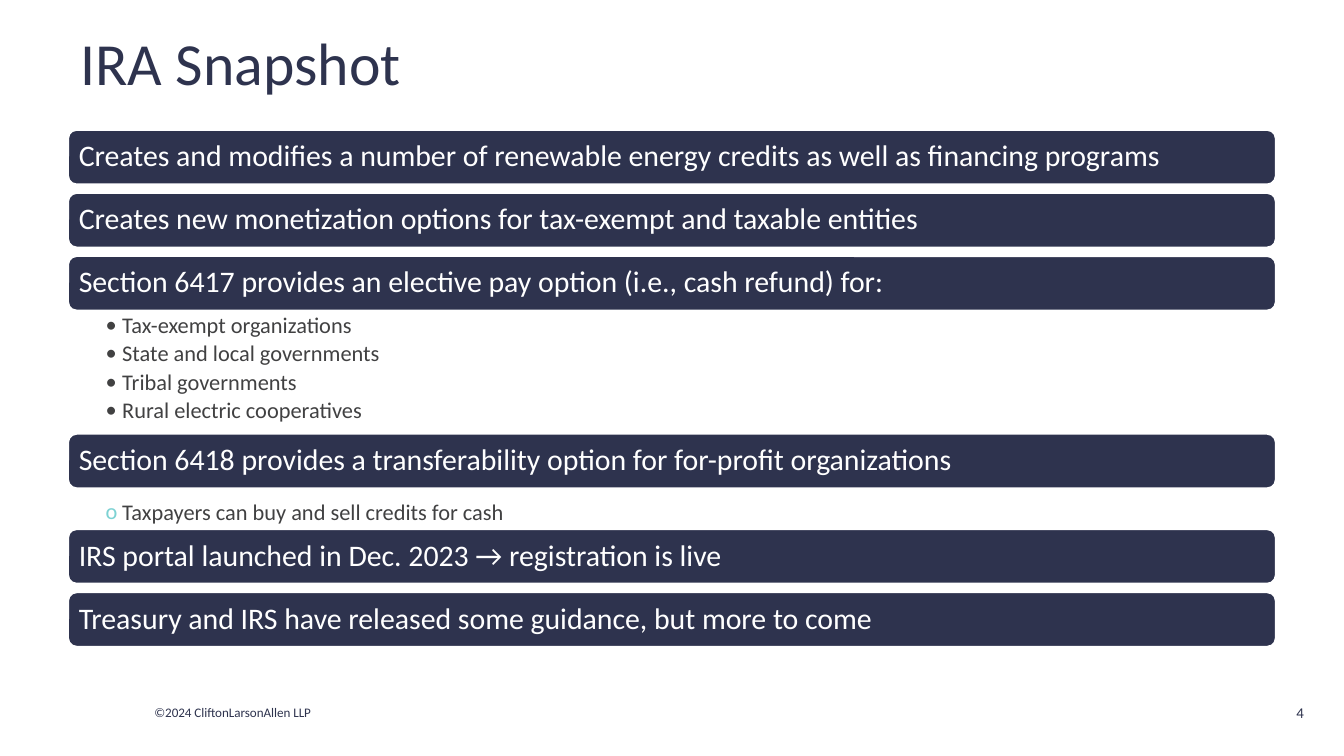
from dataclasses import dataclass
from typing import Any

from pptx import Presentation
from pptx.dml.color import RGBColor
from pptx.enum.shapes import MSO_AUTO_SHAPE_TYPE as ShapeType
from pptx.enum.text import MSO_VERTICAL_ANCHOR as Anchor, PP_PARAGRAPH_ALIGNMENT as Align
from pptx.oxml.ns import qn
from pptx.util import Pt
from lxml.etree import SubElement


@dataclass(frozen=True)
class Theme:
    font: str = "Calibri"
    navy: str = "2E334E"
    white: str = "FFFFFF"
    gray: str = "414142"
    teal: str = "7DD2D3"
    title_size: float = 32
    bar_size: float = 16
    list_size: float = 12
    number_size: float = 8
    footer_size: float = 7


@dataclass(frozen=True)
class Box:
    left: float
    top: float
    width: float
    height: float

    def lengths(self) -> tuple:
        return Pt(self.left), Pt(self.top), Pt(self.width), Pt(self.height)


@dataclass(frozen=True)
class Label:
    text: str
    box: Box
    size: float
    align: Any = Align.LEFT


@dataclass(frozen=True)
class Section:
    heading: str
    items: tuple = ()
    bullet: str = "•"
    bullet_color: str = ""
    list_height: float = 0
    list_offset: float = 0


THEME = Theme()
BAR_LEFT, BAR_TOP, BAR_WIDTH, BAR_HEIGHT, BAR_GAP = 36, 69.1, 648, 30.2, 3.6
BULLET_INDENT = 8.9

LABELS = (
    Label("IRA Snapshot", Box(36, 5.8, 648, 54), THEME.title_size),
    Label("©2024 CliftonLarsonAllen LLP", Box(75.6, 373.7, 112, 15.8), THEME.footer_size),
    Label("4", Box(674.6, 368, 31, 27.4), THEME.number_size, Align.RIGHT),
)

SECTIONS = (
    Section("Creates and modifies a number of renewable energy credits as well as financing programs"),
    Section("Creates new monetization options for tax-exempt and taxable entities"),
    Section(
        "Section 6417 provides an elective pay option (i.e., cash refund) for:",
        ("Tax-exempt organizations", "State and local governments",
         "Tribal governments", "Rural electric cooperatives"),
        bullet_color=THEME.gray, list_height=65,
    ),
    Section(
        "Section 6418 provides a transferability option for for-profit organizations",
        ("Taxpayers can buy and sell credits for cash",),
        bullet="o", bullet_color=THEME.teal, list_height=20.9, list_offset=5,
    ),
    Section("IRS portal launched in Dec. 2023 → registration is live"),
    Section("Treasury and IRS have released some guidance, but more to come"),
)


def apply(target: Any, values: dict) -> None:
    for name, value in values.items():
        setattr(target, name, value)


def format_frame(frame: Any, anchor: Any, left: float = 7.2, right: float = 7.2,
                 vertical: float = 3.6) -> None:
    apply(frame, {
        "word_wrap": True, "vertical_anchor": anchor,
        "margin_left": Pt(left), "margin_right": Pt(right),
        "margin_top": Pt(vertical), "margin_bottom": Pt(vertical),
    })


def write(paragraph: Any, text: str, size: float, color: str, **layout: Any) -> None:
    apply(paragraph, layout)
    run = paragraph.add_run()
    run.text = text
    apply(run.font, {"name": THEME.font, "size": Pt(size)})
    run.font.color.rgb = RGBColor.from_string(color)


def add_bullet(paragraph: Any, character: str, color: str) -> None:
    properties = paragraph._p.get_or_add_pPr()
    properties.set("marL", str(Pt(BULLET_INDENT)))
    properties.set("indent", str(-Pt(BULLET_INDENT)))
    bullet_color = SubElement(properties, qn("a:buClr"))
    SubElement(bullet_color, qn("a:srgbClr"), val=color)
    SubElement(properties, qn("a:buFont"), typeface=THEME.font)
    SubElement(properties, qn("a:buChar"), char=character)


def add_label(slide: Any, label: Label) -> None:
    frame = slide.shapes.add_textbox(*label.box.lengths()).text_frame
    format_frame(frame, Anchor.MIDDLE)
    write(frame.paragraphs[0], label.text, label.size, THEME.navy, alignment=label.align)


def add_bar(slide: Any, text: str, box: Box) -> None:
    shape = slide.shapes.add_shape(ShapeType.ROUNDED_RECTANGLE, *box.lengths())
    shape.shadow.inherit = False
    shape.fill.solid()
    shape.fill.fore_color.rgb = RGBColor.from_string(THEME.navy)
    shape.line.color.rgb = RGBColor.from_string(THEME.white)
    shape.line.width = Pt(2)
    format_frame(shape.text_frame, Anchor.MIDDLE, 4.8, 4.8, 4.8)
    write(shape.text_frame.paragraphs[0], text, THEME.bar_size, THEME.white,
          alignment=Align.LEFT, line_spacing=0.9)


def add_list(slide: Any, section: Section, box: Box) -> None:
    frame = slide.shapes.add_textbox(*box.lengths()).text_frame
    format_frame(frame, Anchor.TOP, 20.6, 8.6, 1.4)
    for index, item in enumerate(section.items):
        paragraph = frame.add_paragraph() if index else frame.paragraphs[0]
        apply(paragraph, {"level": 1, "line_spacing": 0.9, "space_after": Pt(2.2)})
        add_bullet(paragraph, section.bullet, section.bullet_color)
        write(paragraph, item, THEME.list_size, THEME.gray)


def main() -> None:
    presentation = Presentation()
    apply(presentation, {"slide_width": Pt(720), "slide_height": Pt(405)})
    slide = presentation.slides.add_slide(presentation.slide_layouts[6])

    # Title, footer and page number
    for label in LABELS:
        add_label(slide, label)

    # Stacked bars, each followed by its list or a plain gap
    top = BAR_TOP
    for section in SECTIONS:
        add_bar(slide, section.heading, Box(BAR_LEFT, top, BAR_WIDTH, BAR_HEIGHT))
        top += BAR_HEIGHT
        if section.items:
            add_list(slide, section, Box(BAR_LEFT, top + section.list_offset,
                                         BAR_WIDTH, section.list_height))
        top += section.list_height or BAR_GAP

    presentation.save("out.pptx")


if __name__ == "__main__":
    main()
